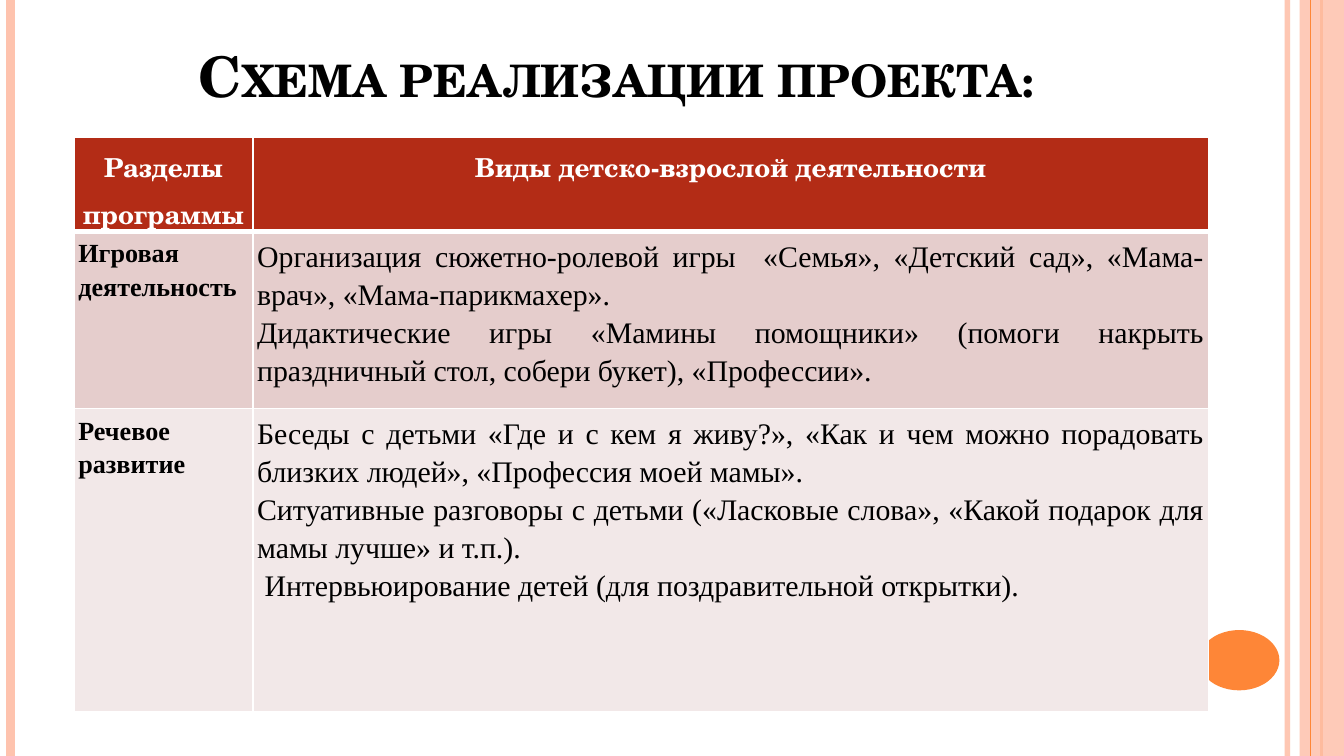
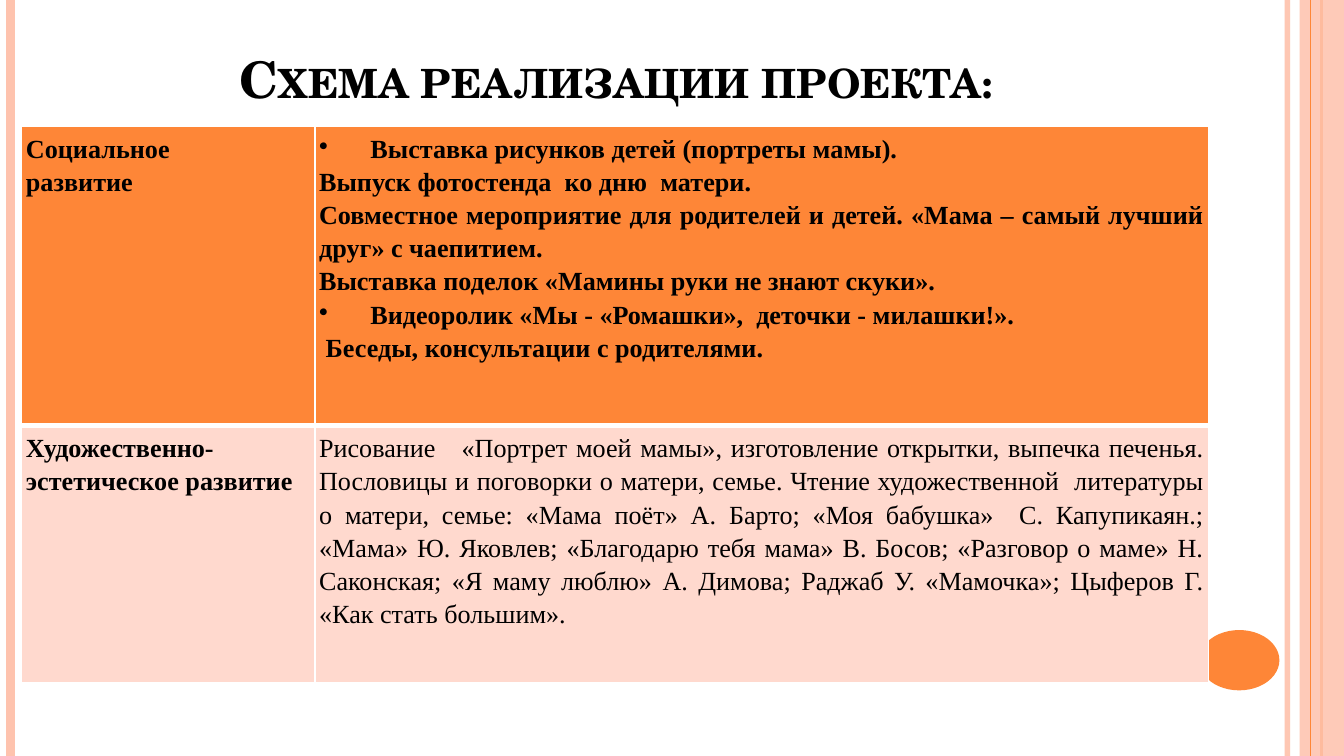
from dataclasses import dataclass
from typing import Any, Optional

import lxml.etree
import pptx
import pptx.dml.color
import pptx.enum.shapes
import pptx.enum.text
import pptx.oxml.ns
import pptx.shapes.base
import pptx.slide
import pptx.table
import pptx.text.text
import pptx.util

Cm, Pt = pptx.util.Cm, pptx.util.Pt
RGB = pptx.dml.color.RGBColor
Align = pptx.enum.text.PP_ALIGN
Shape = pptx.enum.shapes.MSO_SHAPE
qn = pptx.oxml.ns.qn


# Theme
@dataclass(frozen=True)
class Theme:
    serif: str = "TeX Gyre Schola"
    body: str = "Times New Roman"
    black: str = "000000"
    white: str = "FFFFFF"
    orange: str = "FE8637"
    peach: str = "FEC3AE"
    pale_peach: str = "FFD9CE"
    brick: str = "B32C16"
    rose: str = "E5CDCC"
    pale_rose: str = "F2E8E8"
    small: float = 14
    large: float = 16
    thin: float = 1
    thick: float = 3
    line_spacing: float = 1.15
    cell_margin: float = 0.08


T = Theme()
SLIDE_W, SLIDE_H = 25.4, 14.29


# Repeated elements
@dataclass(frozen=True)
class EdgeLine:
    x: float
    color: str
    width: float
    alpha: int = 100


@dataclass(frozen=True)
class Panel:
    kind: Any
    box: tuple[float, float, float, float]
    color: str
    alpha: int = 100


@dataclass(frozen=True)
class TextStyle:
    font: str = T.body
    size: float = T.small
    bold: bool = True
    color: str = T.black
    align: Any = Align.JUSTIFY


@dataclass(frozen=True)
class Bullet:
    text: str


@dataclass(frozen=True)
class Row:
    height: float
    fill: str
    label: tuple[str, ...]
    items: tuple[Any, ...]
    item_style: TextStyle
    label_style: TextStyle = TextStyle()


@dataclass(frozen=True)
class Page:
    title_top: float
    title_size: float
    table_at: tuple[float, float]
    cols: tuple[float, float]
    rows: tuple[Row, ...]


DECOR = (
    EdgeLine(24.33, T.peach, 3, 93),
    EdgeLine(0.2, T.peach, 4.5),
    EdgeLine(24.97, T.orange, 1.5),
    Panel(Shape.RECTANGLE, (24.56, 0, 0.84, SLIDE_H), T.peach, 87),
    EdgeLine(24.77, T.orange, 0.75),
    Panel(Shape.OVAL, (22.66, 11.91, 1.52, 1.14), T.orange),
)

TITLE = "Схема реализации проекта:"
TITLE_LEFT, TITLE_WIDTH, TITLE_BOTTOM = 1.27, 20.75, 2.18

STRONG = TextStyle()
PLAIN = TextStyle(bold=False)
LARGE = TextStyle(size=T.large, bold=False)
HEADER = TextStyle(font=T.serif, color=T.white, align=Align.CENTER)

# Content
PAGES = (
    Page(0.58, 30, (1.4, 2.59), (3.38, 18.06), (
        Row(1.78, T.brick, ("Разделы программы",),
            ("Виды детско-взрослой деятельности",), HEADER, HEADER),
        Row(3.35, T.rose, ("Игровая", "деятельность"), (
            "Организация сюжетно-ролевой игры  «Семья», «Детский сад», "
            "«Мама-врач», «Мама-парикмахер».",
            "Дидактические игры «Мамины помощники» (помоги накрыть "
            "праздничный стол, собери букет), «Профессии».",
        ), LARGE),
        Row(5.74, T.pale_rose, ("Речевое", "развитие"), (
            "Беседы с детьми «Где и с кем я живу?», «Как и чем можно "
            "порадовать близких людей», «Профессия моей мамы».",
            "Ситуативные разговоры с детьми («Ласковые слова», «Какой "
            "подарок для мамы лучше» и т.п.).",
            " Интервьюирование детей (для поздравительной открытки).",
        ), LARGE),
    )),
    Page(0.79, 27, (0.41, 2.39), (5.54, 16.89), (
        Row(5.66, T.orange, ("Социальное", "развитие"), (
            Bullet("Выставка рисунков детей (портреты мамы)."),
            "Выпуск фотостенда  ко дню  матери.",
            "Совместное мероприятие для родителей и детей. «Мама – самый "
            "лучший друг» с чаепитием.",
            "Выставка поделок «Мамины руки не знают скуки».",
            Bullet("Видеоролик «Мы - «Ромашки»,  деточки - милашки!»."),
            " Беседы, консультации с родителями.",
        ), STRONG),
        Row(4.85, T.pale_peach, ("Художественно-эстетическое развитие",), (
            "Рисование   «Портрет моей мамы», изготовление открытки, выпечка "
            "печенья. Пословицы и поговорки о матери, семье. Чтение "
            "художественной  литературы о матери, семье: «Мама поёт» "
            "А. Барто; «Моя бабушка»  С. Капупикаян.; «Мама» Ю. Яковлев; "
            "«Благодарю тебя мама» В. Босов; «Разговор о маме» Н. Саконская; "
            "«Я маму люблю» А. Димова; Раджаб У. «Мамочка»; Цыферов Г. "
            "«Как стать большим».",
        ), PLAIN),
    )),
)


# Formatting helpers
def set_attrs(obj: Any, values: dict[str, Any]) -> None:
    for name, value in values.items():
        setattr(obj, name, value)


def add_node(parent: Any, tag: str, **attrs: Any) -> Any:
    values = {name: str(value) for name, value in attrs.items()}
    return lxml.etree.SubElement(parent, qn(tag), values)


def set_solid(fill: Any, color: str, alpha: int = 100) -> None:
    fill.solid()
    fill.fore_color.rgb = RGB.from_string(color)
    if alpha < 100:
        clr = fill._xPr.find(qn("a:solidFill"))[0]
        add_node(clr, "a:alpha", val=alpha * 1000)


def write(p: pptx.text.text._Paragraph, text: str, style: TextStyle) -> Any:
    p.alignment = style.align
    r = p.add_run()
    r.text = text
    set_attrs(r.font, {"name": style.font, "size": Pt(style.size), "bold": style.bold})
    r.font.color.rgb = RGB.from_string(style.color)
    return r


def set_bullet(p: pptx.text.text._Paragraph) -> None:
    pPr = p._p.get_or_add_pPr()
    pPr.set("marL", str(Cm(0.97)))
    pPr.set("indent", str(Cm(-0.97)))
    add_node(pPr, "a:buChar", char="•")
    tabs = add_node(pPr, "a:tabLst")
    add_node(tabs, "a:tab", pos=Cm(1.27), algn="l")


def set_borders(cell: pptx.table._Cell, top: float, bottom: float) -> None:
    tcPr = cell._tc.get_or_add_tcPr()
    sides = {"L": T.thin, "R": T.thin, "T": top, "B": bottom}
    for i, (side, width) in enumerate(sides.items()):
        ln = add_node(tcPr, f"a:ln{side}", w=Pt(width))
        add_node(add_node(ln, "a:solidFill"), "a:srgbClr", val=T.white)
        tcPr.insert(i, ln)


# Drawing
def draw_line(s: pptx.slide.Slide, edge: EdgeLine) -> None:
    x = Cm(edge.x)
    c = s.shapes.add_connector(
        pptx.enum.shapes.MSO_CONNECTOR.STRAIGHT, x, 0, x, Cm(SLIDE_H))
    c.line.width = Pt(edge.width)
    set_solid(c.line.fill, edge.color, edge.alpha)
    add_node(c._element.spPr, "a:effectLst")


def draw_panel(s: pptx.slide.Slide, panel: Panel) -> None:
    sp = s.shapes.add_shape(panel.kind, *map(Cm, panel.box))
    sp.shadow.inherit = False
    sp.line.fill.background()
    set_solid(sp.fill, panel.color, panel.alpha)


def draw_title(s: pptx.slide.Slide, page: Page) -> None:
    sp = s.shapes.add_textbox(Cm(TITLE_LEFT), Cm(page.title_top), Cm(TITLE_WIDTH),
                              Cm(TITLE_BOTTOM - page.title_top))
    tf = sp.text_frame
    set_attrs(tf, {"word_wrap": True,
                   "vertical_anchor": pptx.enum.text.MSO_ANCHOR.BOTTOM})
    style = TextStyle(T.serif, page.title_size, align=Align.CENTER)
    r = write(tf.paragraphs[0], TITLE, style)
    r._r.get_or_add_rPr().set("cap", "small")


def fill_cell(cell: pptx.table._Cell, items: tuple[Any, ...],
              style: TextStyle, color: str) -> None:
    margin = Cm(T.cell_margin)
    set_attrs(cell, {f"margin_{side}": margin
                     for side in ("left", "right", "top", "bottom")})
    set_solid(cell.fill, color)
    tf = cell.text_frame
    for i, item in enumerate(items):
        p = tf.add_paragraph() if i else tf.paragraphs[0]
        p.line_spacing = T.line_spacing
        bulleted = isinstance(item, Bullet)
        write(p, item.text if bulleted else item, style)
        if bulleted:
            set_bullet(p)


def draw_table(s: pptx.slide.Slide, page: Page) -> None:
    height = sum(row.height for row in page.rows)
    tbl = s.shapes.add_table(len(page.rows), len(page.cols), *map(Cm, page.table_at),
                             Cm(sum(page.cols)), Cm(height)).table
    set_attrs(tbl, {"first_row": False, "horz_banding": False})
    for col, width in zip(tbl.columns, page.cols):
        col.width = Cm(width)
    for i, row in enumerate(page.rows):
        tbl.rows[i].height = Cm(row.height)
        # The first row is set apart by a thick rule
        top = T.thick if i == 1 else T.thin
        bottom = T.thick if i == 0 else T.thin
        parts = ((row.label, row.label_style), (row.items, row.item_style))
        for j, (items, style) in enumerate(parts):
            fill_cell(tbl.cell(i, j), items, style, row.fill)
            set_borders(tbl.cell(i, j), top, bottom)


def draw_page(prs: Any, page: Page) -> Optional[pptx.slide.Slide]:
    s = prs.slides.add_slide(prs.slide_layouts[6])
    set_solid(s.background.fill, T.white)
    for item in DECOR:
        if isinstance(item, EdgeLine):
            draw_line(s, item)
        else:
            draw_panel(s, item)
    draw_title(s, page)
    draw_table(s, page)
    return s


def main() -> None:
    prs = pptx.Presentation()
    set_attrs(prs, {"slide_width": Cm(SLIDE_W), "slide_height": Cm(SLIDE_H)})
    for page in PAGES:
        draw_page(prs, page)
    prs.save("out.pptx")


if __name__ == "__main__":
    main()
